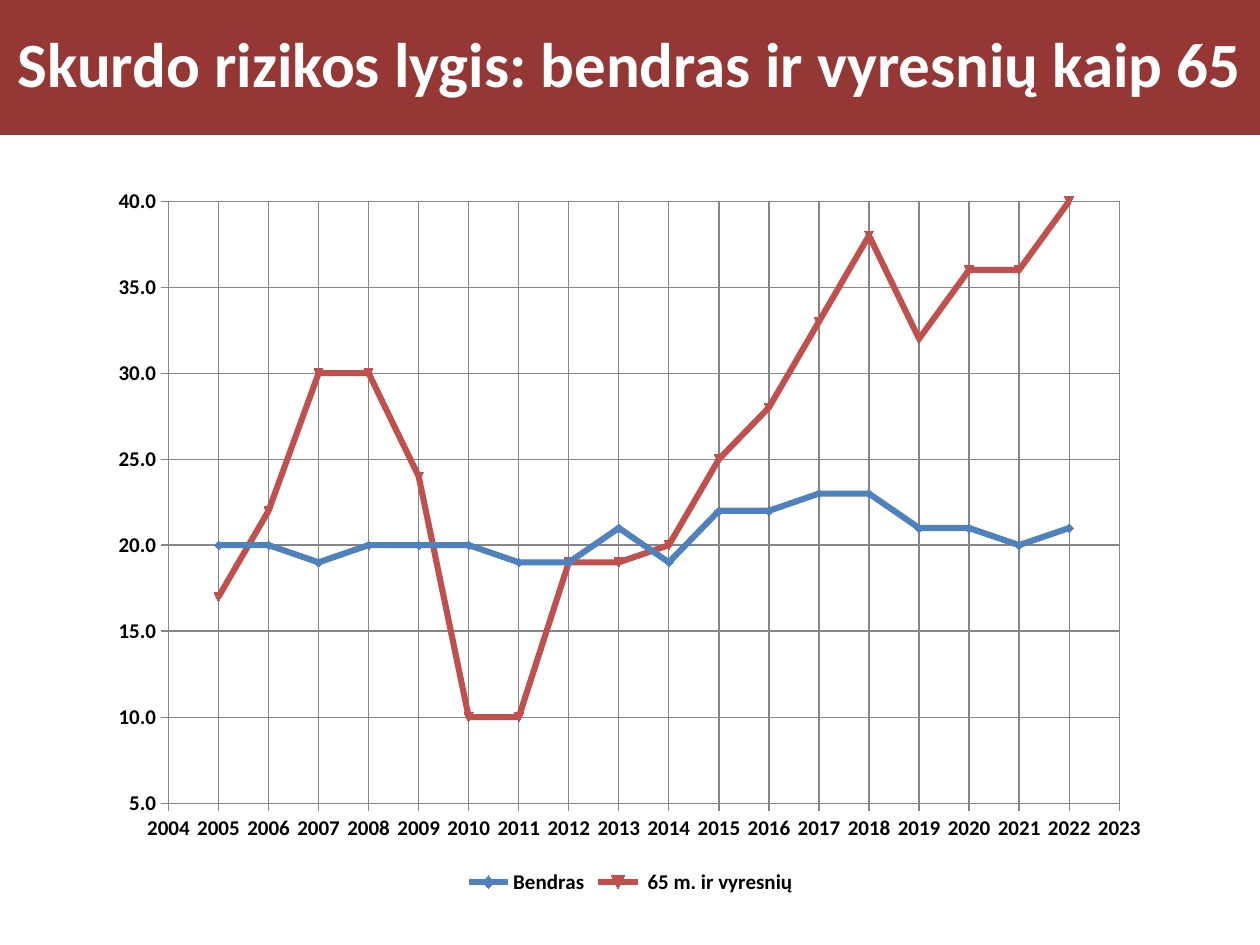
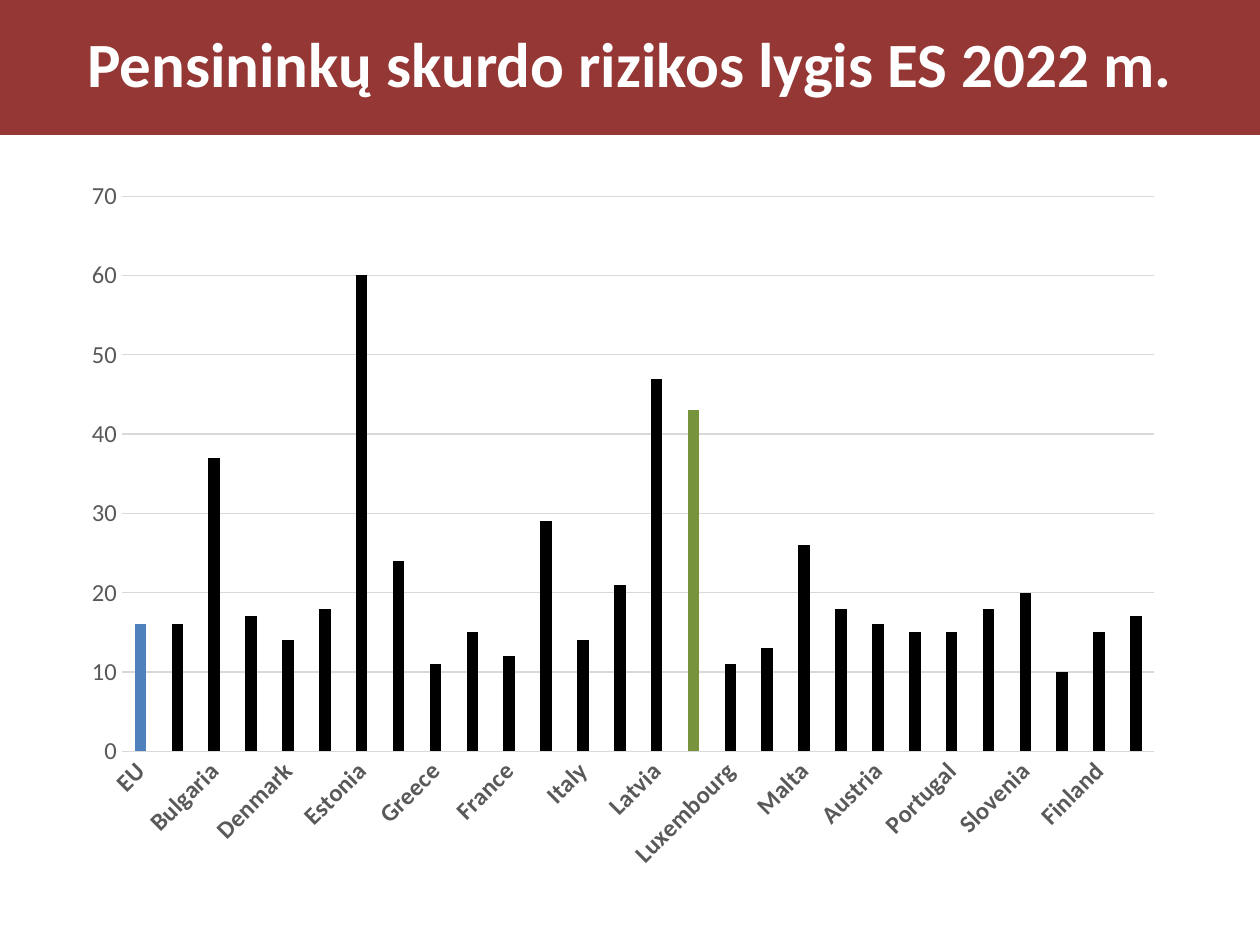
from lxml import etree
from pptx import Presentation
from pptx.chart.data import CategoryChartData, XyChartData
from pptx.dml.color import RGBColor
from pptx.enum.chart import XL_CHART_TYPE, XL_LEGEND_POSITION, XL_MARKER_STYLE, XL_TICK_MARK
from pptx.enum.text import MSO_ANCHOR, MSO_AUTO_SIZE, PP_ALIGN
from pptx.oxml.ns import qn
from pptx.util import Inches, Pt

SCATTER, COLUMNS = XL_CHART_TYPE.XY_SCATTER_LINES, XL_CHART_TYPE.COLUMN_CLUSTERED
LEGEND_BOTTOM = XL_LEGEND_POSITION.BOTTOM
DIAMOND, AUTO_MARKER = XL_MARKER_STYLE.DIAMOND, XL_MARKER_STYLE.AUTOMATIC
TICK_NONE, TICK_OUT = XL_TICK_MARK.NONE, XL_TICK_MARK.OUTSIDE
MIDDLE, CENTER, NO_FIT = MSO_ANCHOR.MIDDLE, PP_ALIGN.CENTER, MSO_AUTO_SIZE.NONE
TITLE_ONLY = 5

# Content
TREND_TITLE = "Skurdo rizikos lygis: bendras ir vyresnių kaip 65"
FIRST_YEAR = 2005
TREND = {
    "Bendras": [20, 20, 19, 20, 20, 20, 19, 19, 21,
                19, 22, 22, 23, 23, 21, 21, 20, 21],
    " 65 m. ir vyresnių": [17, 22, 30, 30, 24, 10, 10, 19, 19,
                           20, 25, 28, 33, 38, 32, 36, 36, 40],
}
COUNTRY_TITLE = "Pensininkų skurdo rizikos lygis ES 2022 m."
COUNTRIES = {
    "EU": 16, "Belgium": 16, "Bulgaria": 37, "Czechia": 17,
    "Denmark": 14, "Germany": 18, "Estonia": 60, "Ireland": 24,
    "Greece": 11, "Spain": 15, "France": 12, "Croatia": 29,
    "Italy": 14, "Cyprus": 21, "Latvia": 47, "Lithuania": 43,
    "Luxembourg": 11, "Hungary": 13, "Malta": 26, "Netherlands": 18,
    "Austria": 16, "Poland": 15, "Portugal": 15, "Romania": 18,
    "Slovenia": 20, "Slovakia": 10, "Finland": 15, "Sweden": 17,
}


# Theme
def rgb(value):
    return RGBColor.from_string(value)


class Theme:
    font = "Calibri"
    band, white, black = rgb("953735"), rgb("FFFFFF"), rgb("000000")
    blue, red, green = rgb("4F81BD"), rgb("C0504D"), rgb("77933C")
    grid, light_grid, label = rgb("868686"), rgb("D9D9D9"), rgb("595959")
    title_size, chart_size = Pt(36), Pt(10)
    trend_size, country_size = Pt(12), Pt(14)
    thin, thick = Pt(0.75), Pt(3.5)


HIGHLIGHTS = {"EU": Theme.blue, "Lithuania": Theme.green}


# Shared parts
def set_font(font, size, color, bold=False):
    font.name, font.size, font.bold = Theme.font, size, bold
    font.color.rgb = color


def set_line(line, color, width=Theme.thin):
    line.color.rgb = color
    line.width = width


def add_titled_slide(presentation, text):
    slide = presentation.slides.add_slide(presentation.slide_layouts[TITLE_ONLY])
    title = slide.shapes.title
    title.left, title.top = 0, 0
    title.width, title.height = presentation.slide_width, Inches(1.07)
    title.fill.solid()
    title.fill.fore_color.rgb = Theme.band
    frame = title.text_frame
    frame.text = text
    frame.word_wrap, frame.auto_size = True, NO_FIT
    frame.vertical_anchor = MIDDLE
    frame.margin_left = frame.margin_right = Inches(0.05)
    paragraph = frame.paragraphs[0]
    paragraph.alignment, paragraph.line_spacing = CENTER, 0.9
    set_font(paragraph.font, Theme.title_size, Theme.white, True)
    return slide


def add_chart(slide, kind, box, data, plot_box):
    chart = slide.shapes.add_chart(kind, *map(Inches, box), data).chart
    chart.has_title = chart.has_legend = False
    chart.plots[0].vary_by_categories = False
    set_font(chart.font, Theme.chart_size, Theme.black)
    # Fixed inner plot area, as fractions of the chart
    area = chart._chartSpace.chart.plotArea
    for old_layout in area.findall(qn("c:layout")):
        area.remove(old_layout)
    layout = etree.Element(qn("c:layout"))
    area.insert(0, layout)
    manual = etree.SubElement(layout, qn("c:manualLayout"))
    settings = [("layoutTarget", "inner"), ("xMode", "edge"), ("yMode", "edge")]
    for name, value in settings + list(zip("xywh", plot_box)):
        etree.SubElement(manual, qn("c:" + name)).set("val", str(value))
    return chart


def style_axis(axis, size, color, tick, bold, grid=None):
    set_font(axis.tick_labels.font, size, color, bold)
    axis.major_tick_mark, axis.minor_tick_mark = tick, TICK_NONE
    axis.has_major_gridlines = grid is not None
    if grid is not None:
        set_line(axis.major_gridlines.format.line, grid)


def set_scale(axis, low, high, step, number_format):
    axis.minimum_scale, axis.maximum_scale, axis.major_unit = low, high, step
    axis.tick_labels.number_format = number_format
    axis.tick_labels.number_format_is_linked = False


# Slide 1: trend by year
def build_trend_slide(presentation):
    slide = add_titled_slide(presentation, TREND_TITLE)
    data = XyChartData()
    for name, rates in TREND.items():
        series = data.add_series(name)
        for year, rate in enumerate(rates, FIRST_YEAR):
            series.add_data_point(year, rate)
    chart = add_chart(slide, SCATTER, (0.78, 1.39, 8.45, 5.75), data,
                      (0.066, 0.036, 0.893, 0.831))
    set_scale(chart.category_axis, 2004, 2023, 1, "0")
    set_scale(chart.value_axis, 5, 40, 5, "0.0")
    for axis in (chart.category_axis, chart.value_axis):
        style_axis(axis, Theme.trend_size, Theme.black, TICK_OUT, True, Theme.grid)
        set_line(axis.format.line, Theme.grid)
    styles = ((Theme.blue, DIAMOND), (Theme.red, AUTO_MARKER))
    for series, (color, marker) in zip(chart.plots[0].series, styles):
        series.smooth = False
        set_line(series.format.line, color, Theme.thick)
        series.marker.style, series.marker.size = marker, 5
        series.marker.format.fill.solid()
        series.marker.format.fill.fore_color.rgb = color
        set_line(series.marker.format.line, color)
    chart.has_legend = True
    chart.legend.position = LEGEND_BOTTOM
    chart.legend.include_in_layout = False
    set_font(chart.legend.font, Theme.trend_size, Theme.black, True)


# Slide 2: comparison by country
def build_country_slide(presentation):
    slide = add_titled_slide(presentation, COUNTRY_TITLE)
    data = CategoryChartData()
    data.categories = list(COUNTRIES)
    data.add_series("Series 1", list(COUNTRIES.values()))
    chart = add_chart(slide, COLUMNS, (0.51, 1.31, 8.83, 5.76), data,
                      (0.052, 0.043, 0.928, 0.765))
    countries, rates = chart.category_axis, chart.value_axis
    style_axis(countries, Theme.country_size, Theme.label, TICK_NONE, True)
    set_line(countries.format.line, Theme.light_grid)
    label_body = countries._element.find(qn("c:txPr")).find(qn("a:bodyPr"))
    label_body.set("rot", str(-45 * 60000))
    style_axis(rates, Theme.country_size, Theme.label, TICK_NONE, False,
               Theme.light_grid)
    set_scale(rates, 0, 70, 10, "0")
    rates.format.line.fill.background()
    plot = chart.plots[0]
    plot.gap_width, plot.overlap = 219, -27
    series = plot.series[0]
    names = list(COUNTRIES)
    bars = [(series, Theme.black)]
    bars += [(series.points[names.index(name)], color)
             for name, color in HIGHLIGHTS.items()]
    for bar, color in bars:
        bar.format.fill.solid()
        bar.format.fill.fore_color.rgb = color


def main():
    presentation = Presentation()
    presentation.slide_width, presentation.slide_height = Inches(10), Inches(7.5)
    build_trend_slide(presentation)
    build_country_slide(presentation)
    presentation.save("out.pptx")


if __name__ == "__main__":
    main()
